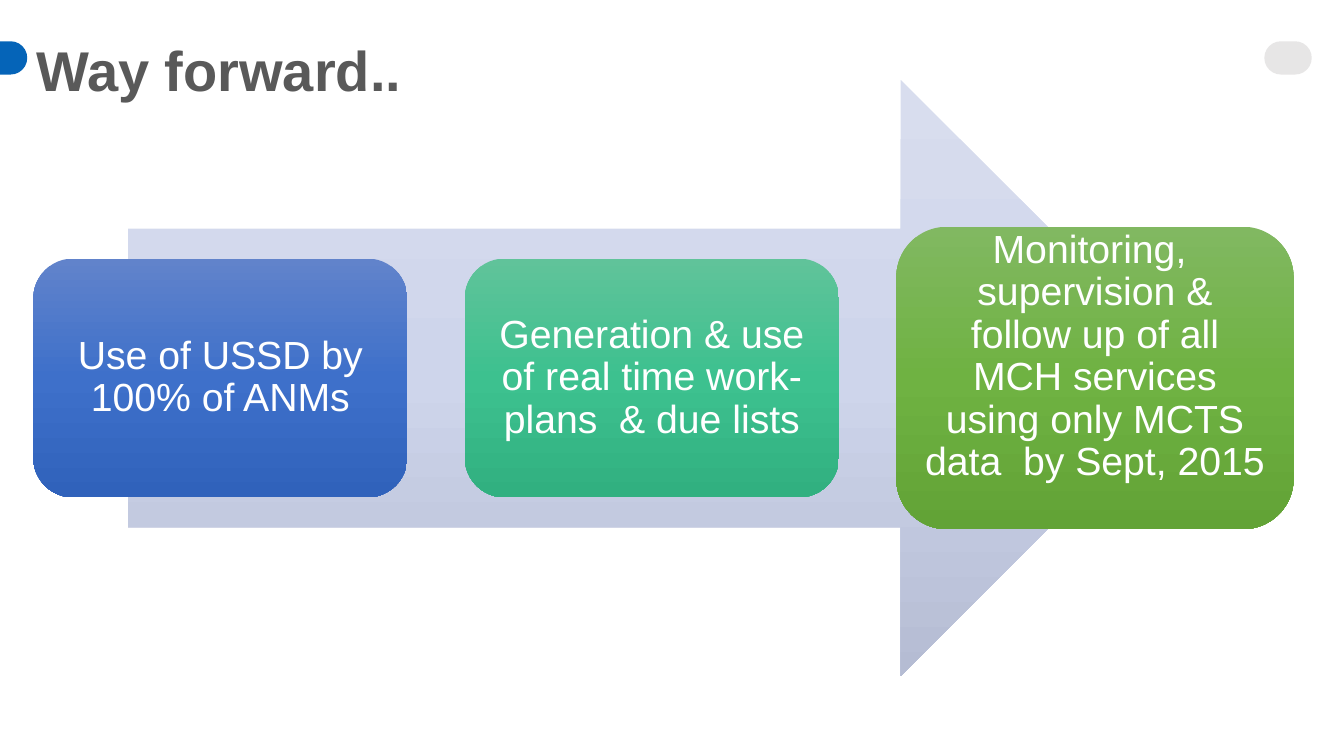
from copy import deepcopy
from dataclasses import dataclass

from pptx import Presentation
from pptx import util as u
from pptx.dml.color import RGBColor
from pptx.enum import shapes, text


@dataclass(frozen=True)
class Theme:
    """Colours, font and type sizes of the slide."""
    font: str = "Arial"
    title_size: int = 40
    step_size: int = 28
    title: str = "595959"
    step_text: str = "FFFFFF"
    tab: str = "0564B8"
    pill: str = "E7E6E6"
    arrow: tuple = ("D8DDEE", "CED5EB", "B5BCD3")
    blue: tuple = ("6183CB", "3E70CA", "3062BB")
    teal: tuple = ("60C39A", "3DC18F", "31B080")
    green: tuple = ("81B861", "6FB242", "62A336")


THEME = Theme()
WIDTH, HEIGHT = 13.33, 7.5
GAP = 0.57
STEPS = (
    ("Use of USSD by 100% of ANMs", THEME.blue, 3.71, 2.37),
    ("Generation & use of real time work-plans  & due lists", THEME.teal, 3.71, 2.37),
    ("Monitoring,  supervision & follow up of all MCH services using only MCTS data  by Sept, 2015  ",
     THEME.green, 3.94, 3.0),
)


def add_block(page, kind, box, colours):
    """Add a borderless shape with a solid or a vertical three-stop fill."""
    block = page.shapes.add_shape(kind, *(u.Inches(length) for length in box))
    block.shadow.inherit = False
    block.line.fill.background()
    if len(colours) == 1:
        block.fill.solid()
        block.fill.fore_color.rgb = RGBColor.from_string(colours[0])
        return block
    block.fill.gradient()
    block.fill.gradient_angle = 270
    first = block.fill.gradient_stops[0]._gs
    first.addnext(deepcopy(first))
    for index, (stop, colour) in enumerate(zip(block.fill.gradient_stops, colours)):
        stop.position = index / 2
        stop.color.rgb = RGBColor.from_string(colour)
    return block


def write(frame, words, size, colour, align, anchor, inset, bold=False):
    """Fill a text frame with one formatted paragraph."""
    frame.text = words
    frame.auto_size = text.MSO_AUTO_SIZE.NONE
    frame.vertical_anchor = anchor
    frame.margin_left = frame.margin_right = u.Inches(inset)
    frame.margin_top = frame.margin_bottom = u.Inches(inset)
    para = frame.paragraphs[0]
    para.alignment, para.line_spacing = align, 0.9
    para.space_before = u.Pt(0)
    for span in para.runs:
        span.font.name, span.font.size, span.font.bold = THEME.font, u.Pt(size), bold
        span.font.color.rgb = RGBColor.from_string(colour)


def add_header(page, box, title):
    """Place the edge tab, the title and the page pill in the header band."""
    left, top, width, height = box
    for offset, length, colour in ((-0.45, 0.72, THEME.tab), (width - 0.79, 0.47, THEME.pill)):
        pill = add_block(page, shapes.MSO_SHAPE.ROUNDED_RECTANGLE,
                         (left + offset, top, length, height), (colour,))
        pill.adjustments[0] = 0.5
    heading = page.shapes.title
    heading.left, heading.top = u.Inches(left + 0.36), u.Inches(top + 0.02)
    heading.width, heading.height = u.Inches(11.92), u.Inches(0.49)
    write(heading.text_frame, title, THEME.title_size, THEME.title,
          text.PP_ALIGN.LEFT, text.MSO_ANCHOR.TOP, 0, bold=True)
    heading.text_frame.word_wrap = False


def add_process(page, box, steps):
    """Place the steps in a row, centred on a wide arrow behind them."""
    left, top, width, height = box
    middle = top + height / 2
    arrow_width = width * 0.85
    add_block(page, shapes.MSO_SHAPE.RIGHT_ARROW,
              (left + (width - arrow_width) / 2, top, arrow_width, height), THEME.arrow)
    for words, colours, step_width, step_height in steps:
        step = add_block(page, shapes.MSO_SHAPE.ROUNDED_RECTANGLE,
                         (left, middle - step_height / 2, step_width, step_height), colours)
        write(step.text_frame, words, THEME.step_size, THEME.step_text,
              text.PP_ALIGN.CENTER, text.MSO_ANCHOR.MIDDLE, 0.12)
        step.text_frame.word_wrap = True
        left += step_width + GAP


def main():
    """Build the slide and save the deck."""
    deck = Presentation()
    deck.slide_width, deck.slide_height = u.Inches(WIDTH), u.Inches(HEIGHT)
    page = deck.slides.add_slide(deck.slide_layouts[5])
    add_header(page, (0, 0.41, WIDTH, 0.33), "Way forward..")
    add_process(page, (0.33, 0.79, 12.5, 5.92), STEPS)
    deck.save("out.pptx")


if __name__ == "__main__":
    main()
